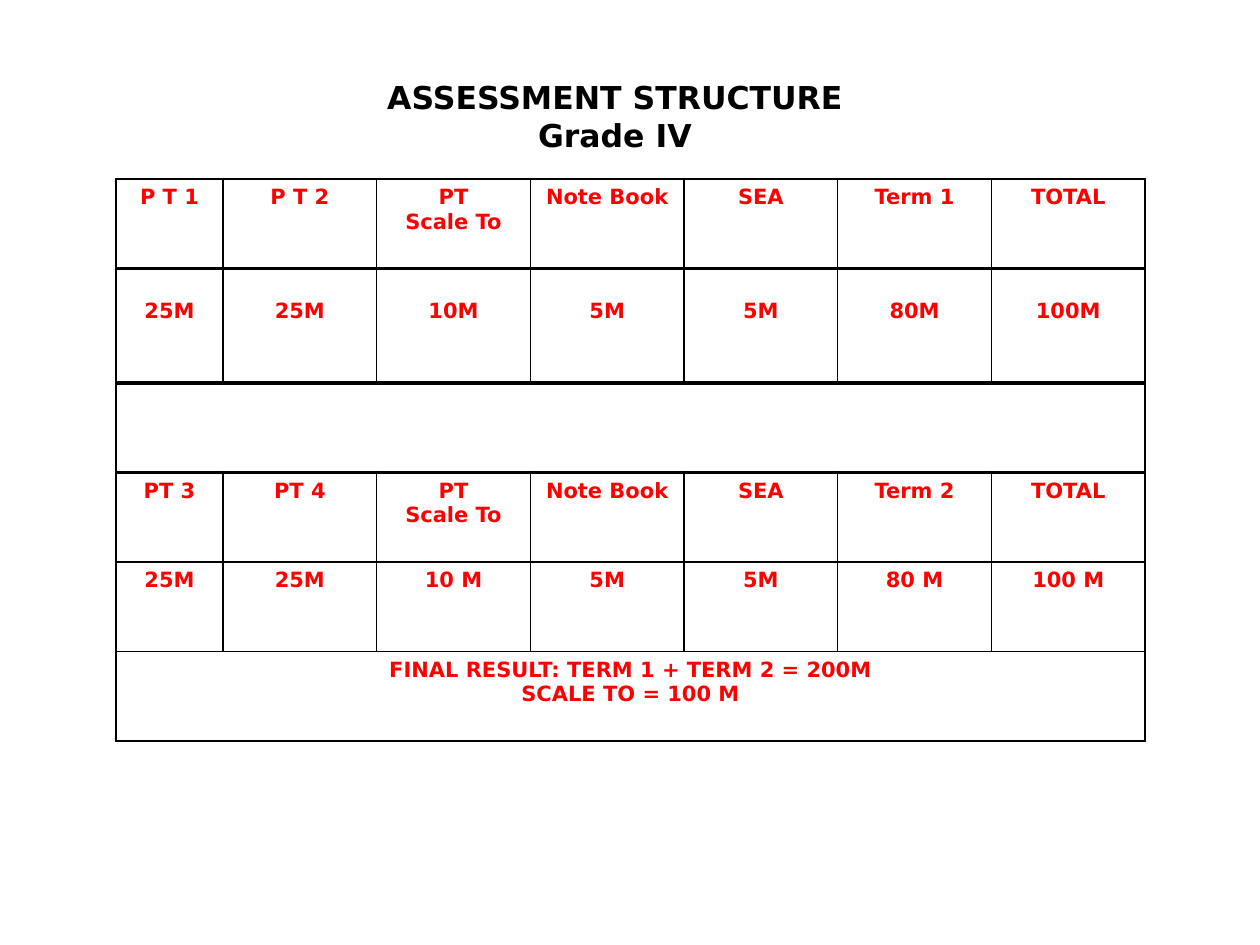
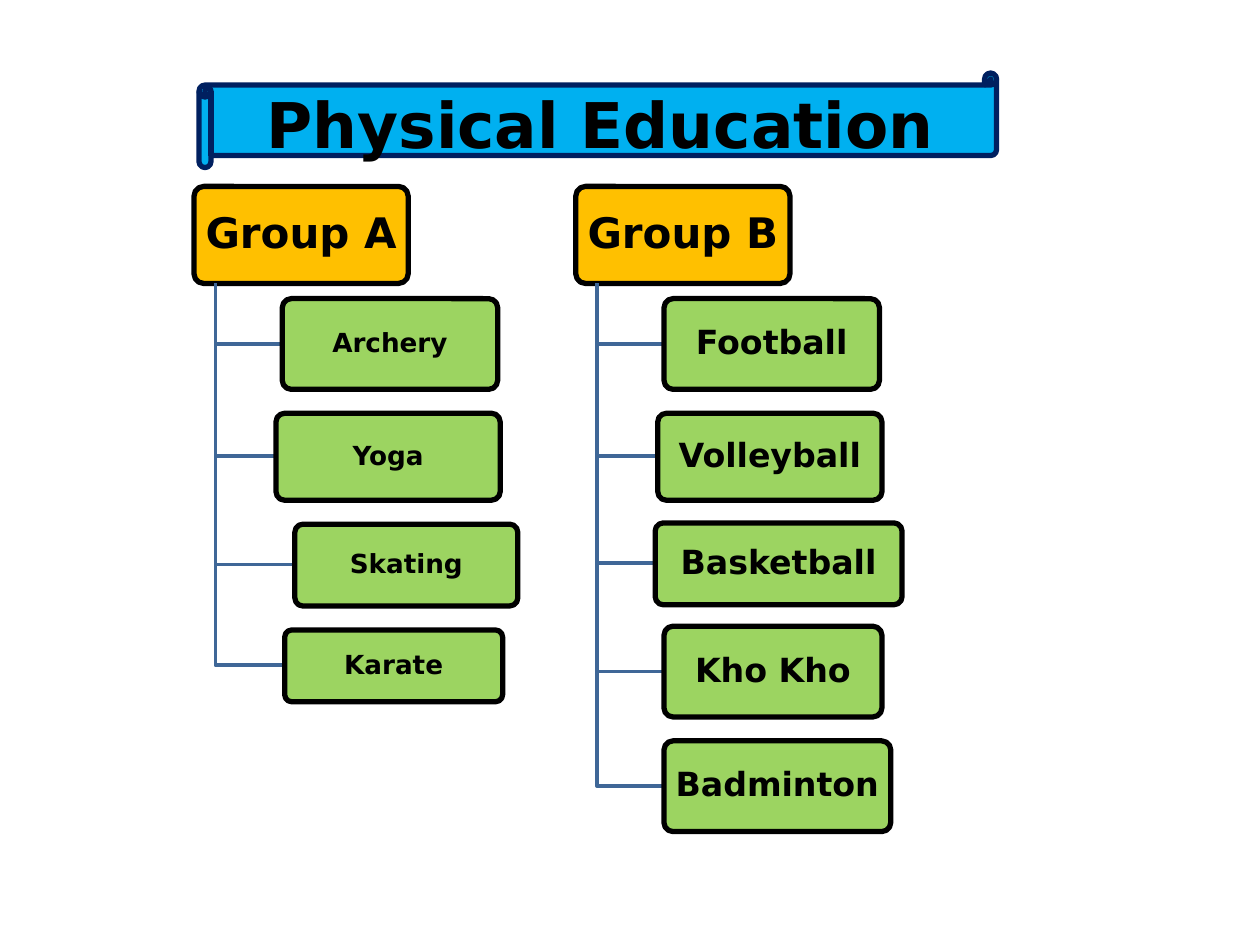
from dataclasses import dataclass

import pptx
import pptx.dml.color
import pptx.enum.shapes
import pptx.enum.text
import pptx.oxml
import pptx.oxml.ns
import pptx.util
from lxml import etree

RGBColor = pptx.dml.color.RGBColor
SHAPE = pptx.enum.shapes.MSO_SHAPE
ANCHOR = pptx.enum.text.MSO_ANCHOR
CENTER = pptx.enum.text.PP_ALIGN.CENTER
qn = pptx.oxml.ns.qn

PX = 9144
FONT = "DejaVu Sans"
BLACK = RGBColor(0x00, 0x00, 0x00)
RED = RGBColor(0xFF, 0x00, 0x00)
AMBER = RGBColor(0xFF, 0xC0, 0x00)
GREEN = RGBColor(0x92, 0xD0, 0x50)
STEEL = RGBColor(0x3F, 0x67, 0x97)
SKY = RGBColor(0x00, 0xB0, 0xF0)
NAVY = RGBColor(0x00, 0x20, 0x60)


@dataclass(frozen=True)
class Box:
    left: int
    top: int
    width: int
    height: int

    def emu(self) -> list[int]:
        return [v * PX for v in (self.left, self.top, self.width, self.height)]


@dataclass(frozen=True)
class Sport:
    name: str
    box: Box


@dataclass(frozen=True)
class Group:
    name: str
    left: int
    size: int
    sports: tuple[Sport, ...]


TITLE_BOX = Box(92, 57, 792, 131)
TABLE_BOX = Box(92, 142, 817, 446)
FIRST_COLUMN, OTHER_COLUMN = 85, 122
ROW_HEIGHTS = (71, 91, 71, 71, 71, 71)
RULE_WIDTHS = (1, 2, 2, 2, 1, 1, 1)
MARKS_ROW = 1
MARKS_MARGIN = 24
ASSESSMENT = (
    ("P T 1", "P T 2", "PT\nScale To", "Note Book", "SEA", "Term 1", "TOTAL"),
    ("25M", "25M", "10M", "5M", "5M", "80M", "100M"),
    (),
    ("PT 3", "PT 4", "PT\nScale To", "Note Book", "SEA", "Term 2", "TOTAL"),
    ("25M", "25M", "10 M", "5M", "5M", "80 M", "100 M"),
    ("FINAL RESULT: TERM 1 + TERM 2 = 200M\nSCALE TO = 100 M",),
)

BANNER_BOX = Box(158, 58, 633, 75)
BANNER_TITLE_BOX = Box(160, 58, 633, 79)
GROUP_TOP, GROUP_WIDTH, GROUP_HEIGHT = 148, 170, 77
SPINE_OFFSET = 17
GROUPS = (
    Group("Group A", 154, 15, (
        Sport("Archery", Box(224, 237, 171, 72)),
        Sport("Yoga", Box(219, 328, 178, 69)),
        Sport("Skating", Box(234, 416, 177, 65)),
        Sport("Karate", Box(226, 500, 173, 57)),
    )),
    Group("Group B", 457, 19, (
        Sport("Football", Box(527, 237, 171, 72)),
        Sport("Volleyball", Box(522, 328, 178, 69)),
        Sport("Basketball", Box(520, 415, 196, 65)),
        Sport("Kho Kho", Box(527, 497, 173, 72)),
        Sport("Badminton", Box(527, 588, 180, 72)),
    )),
)


def write(tf, text: str, size: int, color: RGBColor, spacing: float = 1.0) -> None:
    for i, line in enumerate(text.split("\n")):
        p = tf.add_paragraph() if i else tf.paragraphs[0]
        p.alignment = CENTER
        p.line_spacing = spacing
        r = p.add_run()
        r.text = line
        r.font.name = FONT
        r.font.size = pptx.util.Pt(size)
        r.font.bold = True
        r.font.color.rgb = color


def set_title(s, box: Box, text: str, size: int, anchor):
    sp = s.shapes.title
    sp.left, sp.top, sp.width, sp.height = box.emu()
    tf = sp.text_frame
    tf.word_wrap = True
    tf.auto_size = pptx.enum.text.MSO_AUTO_SIZE.NONE
    tf.vertical_anchor = anchor
    write(tf, text, size, BLACK)
    return sp


def add_filled(s, kind, box: Box, adjustment: float, fill: RGBColor, line: RGBColor):
    sp = s.shapes.add_shape(kind, *box.emu())
    sp.adjustments[0] = adjustment
    sp.shadow.inherit = False
    sp.fill.solid()
    sp.fill.fore_color.rgb = fill
    sp.line.color.rgb = line
    sp.line.width = pptx.util.Pt(3)
    return sp


def add_label_box(s, box: Box, text: str, size: int, fill: RGBColor):
    sp = add_filled(s, SHAPE.ROUNDED_RECTANGLE, box, 0.1, fill, BLACK)
    tf = sp.text_frame
    tf.word_wrap = True
    tf.vertical_anchor = ANCHOR.MIDDLE
    tf.margin_left = tf.margin_right = 3 * PX
    tf.margin_top = tf.margin_bottom = 2 * PX
    write(tf, text, size, BLACK, 0.9)
    return sp


def set_opacity(sp, percent: int) -> None:
    color = sp.element.spPr.find(qn("a:solidFill"))[0]
    etree.SubElement(color, qn("a:alpha")).set("val", str(percent * 1000))


def add_branch(s, x: int, top: int, box: Box) -> None:
    middle = box.top + box.height // 2
    builder = s.shapes.build_freeform(x, top, scale=PX)
    builder.add_line_segments([(x, middle), (box.left, middle)], close=False)
    sp = builder.convert_to_shape()
    sp.shadow.inherit = False
    sp.fill.background()
    sp.line.color.rgb = STEEL
    sp.line.width = pptx.util.Pt(2)


def set_borders(cell, top: int, bottom: int) -> None:
    tcPr = cell._tc.get_or_add_tcPr()
    for side, width in (("L", 1), ("R", 1), ("T", top), ("B", bottom)):
        ln = etree.SubElement(tcPr, qn(f"a:ln{side}"), w=str(pptx.util.Pt(width)))
        fill = etree.SubElement(ln, qn("a:solidFill"))
        etree.SubElement(fill, qn("a:srgbClr"), val=str(BLACK))


def add_assessment_table(s) -> None:
    columns = len(ASSESSMENT[0])
    table = s.shapes.add_table(len(ASSESSMENT), columns, *TABLE_BOX.emu()).table
    table.first_row = table.horz_banding = False
    for i, column in enumerate(table.columns):
        column.width = (OTHER_COLUMN if i else FIRST_COLUMN) * PX
    for i, texts in enumerate(ASSESSMENT):
        table.rows[i].height = ROW_HEIGHTS[i] * PX
        if len(texts) < columns:
            table.cell(i, 0).merge(table.cell(i, columns - 1))
        for j in range(columns):
            cell = table.cell(i, j)
            set_borders(cell, RULE_WIDTHS[i], RULE_WIDTHS[i + 1])
            cell.fill.background()
            if i == MARKS_ROW:
                cell.margin_top = MARKS_MARGIN * PX
            if j < len(texts):
                write(cell.text_frame, texts[j], 12, RED)


def build_assessment(s) -> None:
    set_title(s, TITLE_BOX, "ASSESSMENT STRUCTURE\nGrade IV", 18, ANCHOR.TOP)
    add_assessment_table(s)


def build_physical_education(s) -> None:
    for group in GROUPS:
        box = Box(group.left, GROUP_TOP, GROUP_WIDTH, GROUP_HEIGHT)
        add_label_box(s, box, group.name, 24, AMBER)
        for sport in group.sports:
            add_branch(s, group.left + SPINE_OFFSET, GROUP_TOP + GROUP_HEIGHT, sport.box)
            sp = add_label_box(s, sport.box, sport.name, group.size, GREEN)
            set_opacity(sp, 90)
    banner = add_filled(s, SHAPE.HORIZONTAL_SCROLL, BANNER_BOX, 0.127, SKY, NAVY)
    title = set_title(s, BANNER_TITLE_BOX, "Physical Education", 36, ANCHOR.MIDDLE)
    banner.element.addnext(title.element)


def main() -> None:
    prs = pptx.Presentation()
    prs.slide_width, prs.slide_height = 1000 * PX, 750 * PX
    title_only = prs.slide_layouts[5]
    for build in (build_assessment, build_physical_education):
        build(prs.slides.add_slide(title_only))
    prs.save("out.pptx")


if __name__ == "__main__":
    main()
